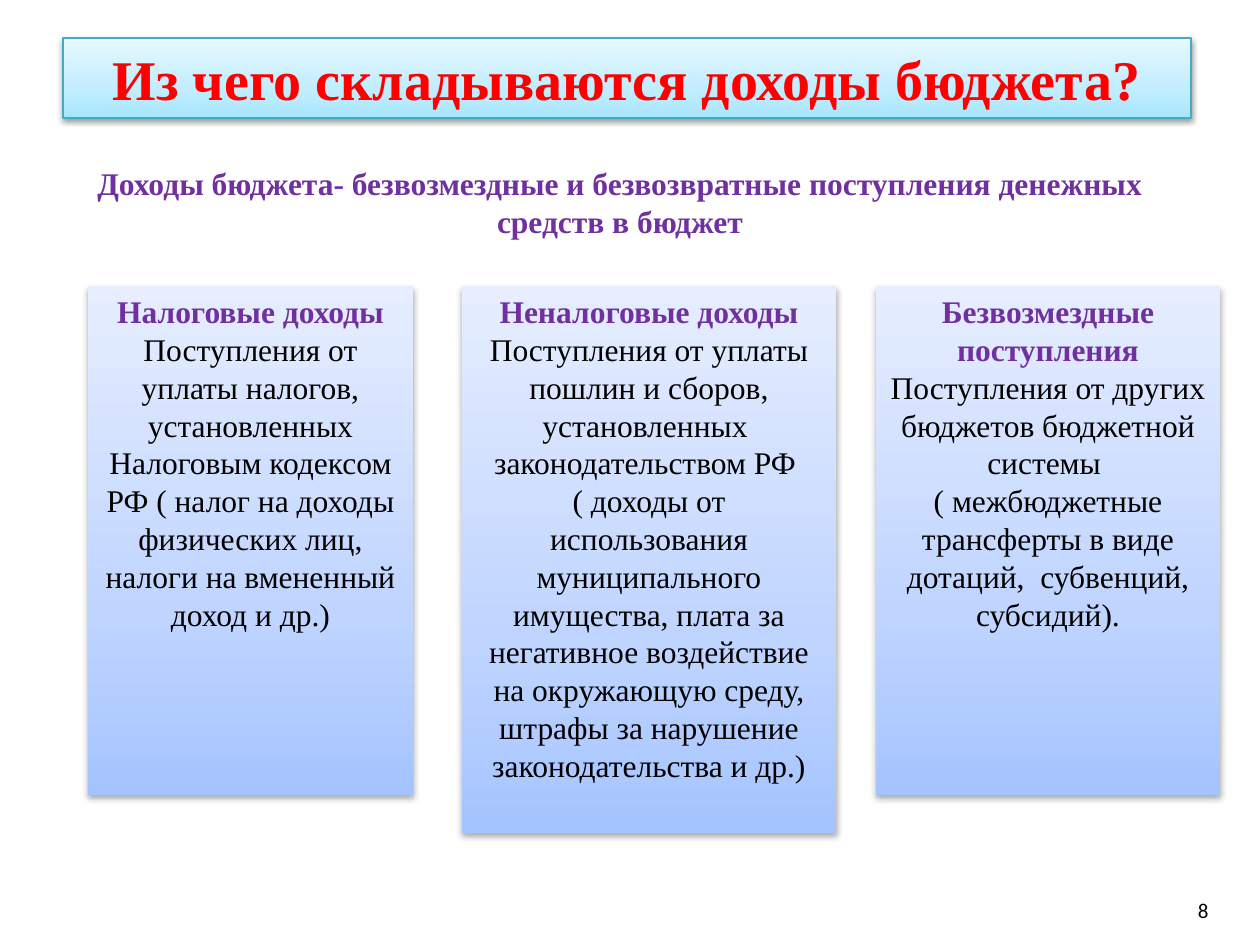
from copy import deepcopy
from dataclasses import dataclass

from lxml import etree
from pptx import Presentation
from pptx import util as u
from pptx.dml.color import RGBColor
from pptx.enum import shapes, text
from pptx.oxml.ns import qn

PX = 914400 / 126
SERIF = "Times New Roman"
RED, PURPLE, BLACK = "FF0000", "7030A0", "000000"
CYAN_STOPS = ("A7E6FF", "C1EDFF", "E7F8FF")
BLUE_STOPS = ("A4C4FF", "BFD4FF", "E6EEFF")


@dataclass
class IncomeCard:
    left: int
    width: int
    height: int
    heading: str
    body: tuple[str, ...]


CARDS = [
    IncomeCard(88, 325, 509, "Налоговые доходы", (
        "Поступления от уплаты налогов, установленных Налоговым кодексом РФ "
        "( налог на доходы физических лиц, налоги на вмененный доход и др.)",)),
    IncomeCard(462, 374, 547, "Неналоговые доходы", (
        "Поступления от уплаты пошлин и сборов, установленных  законодательством РФ ",
        "( доходы от использования муниципального имущества, плата за негативное "
        "воздействие на окружающую среду, штрафы за нарушение законодательства и др.)")),
    IncomeCard(876, 344, 509, "Безвозмездные поступления", (
        "Поступления от других бюджетов бюджетной системы ",
        "( межбюджетные трансферты в виде дотаций,  субвенций, субсидий).")),
]


def px(n: int) -> int:
    return round(n * PX)


def rgb(color: str) -> RGBColor:
    return RGBColor.from_string(color)


def place(sp, left: int, top: int, width: int, height: int) -> None:
    sp.left, sp.top, sp.width, sp.height = map(px, (left, top, width, height))


def fill_upward(sp, colors: tuple[str, ...]) -> None:
    """Fill with a three-stop gradient that starts at the bottom edge."""
    sp.fill.gradient()
    sp.fill.gradient_angle = 90
    stops = sp._element.spPr.find(".//" + qn("a:gsLst"))
    stops.append(deepcopy(stops[-1]))
    for stop, color, pos in zip(sp.fill.gradient_stops, colors, (0, 0.35, 1)):
        stop.color.rgb = rgb(color)
        stop.position = pos


def drop_shadow(sp, alpha: int, blur: float, dist: float) -> None:
    """Cast a black shadow downwards; alpha in percent, lengths in points."""
    sp.shadow.inherit = False
    effects = sp._element.spPr.find(qn("a:effectLst"))
    shadow = etree.SubElement(effects, qn("a:outerShdw"), blurRad=str(u.Pt(blur)),
                              dist=str(u.Pt(dist)), dir="5400000", rotWithShape="0")
    color = etree.SubElement(shadow, qn("a:srgbClr"), val=BLACK)
    etree.SubElement(color, qn("a:alpha"), val=str(alpha * 1000))


def write(sp, content: str, *, size: int = 18, font: str = SERIF, color: str = BLACK,
          bold: bool = False, align=text.PP_ALIGN.CENTER,
          anchor=text.MSO_ANCHOR.TOP, new: bool = False) -> None:
    """Write one paragraph, the first or (new) a further one."""
    tf = sp.text_frame
    tf.word_wrap = True
    tf.auto_size = text.MSO_AUTO_SIZE.NONE
    tf.vertical_anchor = anchor
    p = tf.add_paragraph() if new else tf.paragraphs[0]
    p.alignment = align
    r = p.add_run()
    r.text = content
    r.font.size, r.font.name, r.font.bold = u.Pt(size), font, bold
    r.font.color.rgb = rgb(color)


def add_text(s, box: tuple[int, int, int, int], content: str, **fmt) -> None:
    write(s.shapes.add_textbox(*map(px, box)), content, **fmt)


def add_title(s, content: str) -> None:
    sp = s.shapes.title
    place(sp, 63, 38, 1128, 80)
    fill_upward(sp, CYAN_STOPS)
    sp.line.color.rgb = rgb("46AAC5")
    sp.line.width = u.Pt(0.75)
    drop_shadow(sp, 38, 3.1, 1.6)
    write(sp, content, size=32, color=RED, bold=True, anchor=text.MSO_ANCHOR.MIDDLE)


def add_card(s, card: IncomeCard) -> None:
    box = (card.left, 286, card.width, card.height)
    sp = s.shapes.add_shape(shapes.MSO_SHAPE.RECTANGLE, *map(px, box))
    fill_upward(sp, BLUE_STOPS)
    sp.line.fill.background()
    drop_shadow(sp, 32, 3.5, 2.2)
    write(sp, card.heading, color=PURPLE, bold=True)
    for line in card.body:
        write(sp, line, new=True)


def main() -> None:
    prs = Presentation()
    prs.slide_width, prs.slide_height = px(1260), px(945)
    s = prs.slides.add_slide(prs.slide_layouts[5])
    add_title(s, "Из чего складываются доходы бюджета?")
    add_text(s, (896, 876, 325, 69), "8", size=12, font="Calibri",
             align=text.PP_ALIGN.RIGHT, anchor=text.MSO_ANCHOR.MIDDLE)
    add_text(s, (69, 158, 1102, 89),
             "Доходы бюджета- безвозмездные и безвозвратные поступления "
             "денежных средств в бюджет", color=PURPLE, bold=True)
    for card in CARDS:
        add_card(s, card)
    prs.save("out.pptx")


if __name__ == "__main__":
    main()
